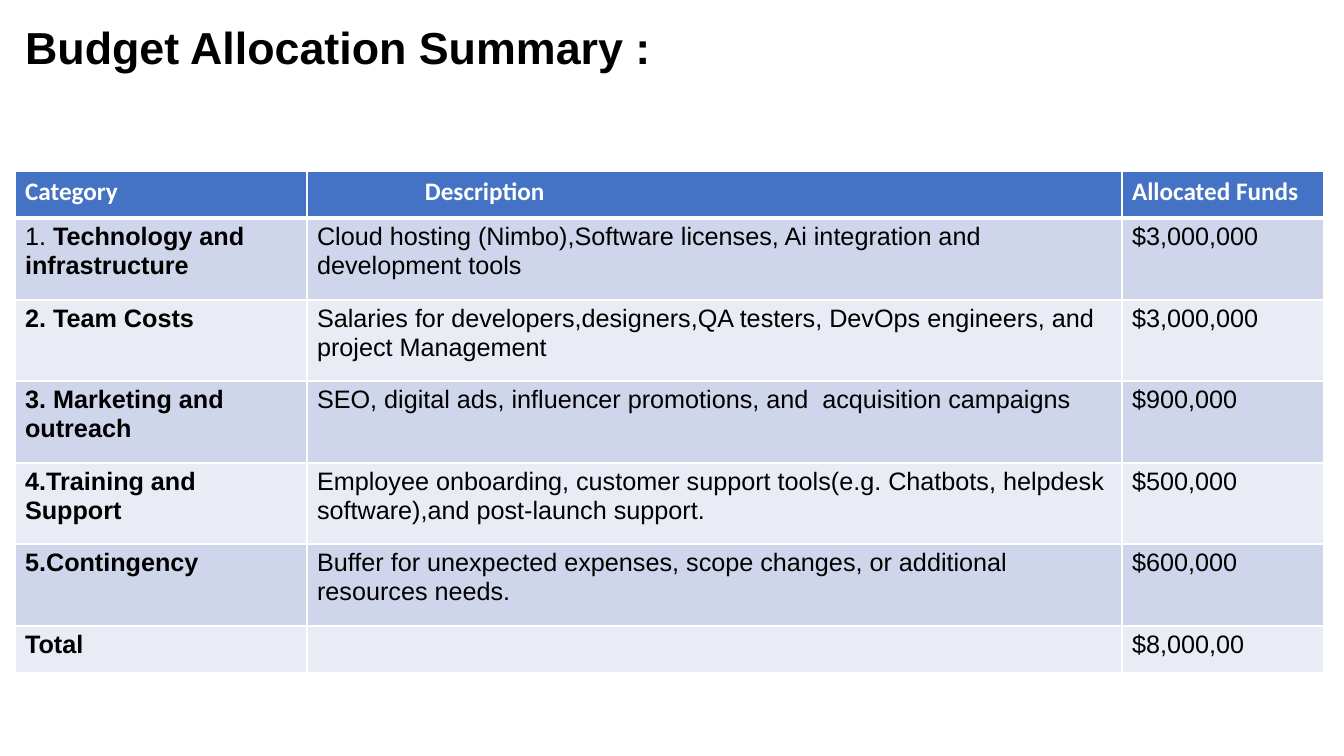
from dataclasses import dataclass

from lxml import etree
from pptx import Presentation
from pptx.dml.color import RGBColor
from pptx.enum.text import MSO_ANCHOR, PP_ALIGN
from pptx.oxml.ns import qn
from pptx.util import Pt

MIDDLE = MSO_ANCHOR.MIDDLE
LEFT = PP_ALIGN.LEFT

TITLE = "Budget Allocation Summary :"
HEADER = ("Category", "Description", "Allocated Funds")
BUDGET = [
    ("1. ", "Technology and infrastructure",
     "Cloud hosting (Nimbo),Software licenses, Ai integration and development tools",
     "$3,000,000"),
    ("", "2. Team Costs",
     "Salaries for developers,designers,QA testers, DevOps engineers, and project Management",
     "$3,000,000"),
    ("", "3. Marketing and outreach",
     "SEO, digital ads, influencer promotions, and  acquisition campaigns",
     "$900,000"),
    ("", "4.Training and Support",
     "Employee onboarding, customer support tools(e.g. Chatbots, helpdesk software),and post-launch support.",
     "$500,000"),
    ("", "5.Contingency",
     "Buffer for unexpected expenses, scope changes, or additional resources needs.",
     "$600,000"),
    ("", "Total", "", "$8,000,00"),
]

SLIDE = (1344, 756)
TITLE_BOX = (15, 27, 1237, 46)
TABLE_POS = (15, 171)
COLS = (292, 815, 202)
ROWS = (47, 82, 81, 82, 81, 82, 47)
DESCRIPTION_INSET = 118


@dataclass(frozen=True)
class Theme:
    body_font: str = "Arial"
    header_font: str = "Calibri"
    title_size: int = 32
    body_size: int = 18
    text: str = "000000"
    white: str = "FFFFFF"
    header: str = "4472C4"
    bands: tuple = ("CFD5EA", "E9EBF5")


T = Theme()


def px(n):
    return round(n * 914400 / 100.8)


def add_text(p, text, size=T.body_size, font=T.body_font, color=T.text, bold=False):
    r = p.add_run()
    r.text = text
    r.font.size = Pt(size)
    r.font.name = font
    r.font.bold = bold
    r.font.color.rgb = RGBColor.from_string(color)


def style_cell(cell, fill, bottom):
    tc_pr = cell._tc.get_or_add_tcPr()
    for side, width in (("L", 1), ("R", 1), ("T", 1), ("B", bottom)):
        ln = etree.SubElement(tc_pr, qn(f"a:ln{side}"), w=str(Pt(width)))
        solid = etree.SubElement(ln, qn("a:solidFill"))
        etree.SubElement(solid, qn("a:srgbClr"), val=T.white)
    cell.fill.solid()
    cell.fill.fore_color.rgb = RGBColor.from_string(fill)


def add_title(s):
    title = s.shapes.title
    title.left, title.top, title.width, title.height = map(px, TITLE_BOX)
    tf = title.text_frame
    tf.word_wrap = True
    tf.vertical_anchor = MIDDLE
    p = tf.paragraphs[0]
    p.alignment = LEFT
    p.line_spacing = 0.9
    add_text(p, TITLE, size=T.title_size, bold=True)


def add_budget_table(s):
    box = (*TABLE_POS, sum(COLS), sum(ROWS))
    table = s.shapes.add_table(len(ROWS), len(COLS), *map(px, box)).table
    for col, width in zip(table.columns, COLS):
        col.width = px(width)
    for row, height in zip(table.rows, ROWS):
        row.height = px(height)

    for c, label in enumerate(HEADER):
        cell = table.cell(0, c)
        style_cell(cell, T.header, 3)
        add_text(cell.text_frame.paragraphs[0], label,
                 font=T.header_font, color=T.white, bold=True)
    table.cell(0, 1).margin_left = px(DESCRIPTION_INSET)

    for i, (number, category, description, funds) in enumerate(BUDGET):
        runs = (((number, False), (category, True)),
                ((description, False),), ((funds, False),))
        for c, parts in enumerate(runs):
            cell = table.cell(i + 1, c)
            style_cell(cell, T.bands[i % 2], 1)
            for text, bold in parts:
                if text:
                    add_text(cell.text_frame.paragraphs[0], text, bold=bold)


def main():
    prs = Presentation()
    prs.slide_width, prs.slide_height = map(px, SLIDE)
    s = prs.slides.add_slide(prs.slide_layouts[5])
    add_title(s)
    add_budget_table(s)
    prs.save("out.pptx")


if __name__ == "__main__":
    main()
